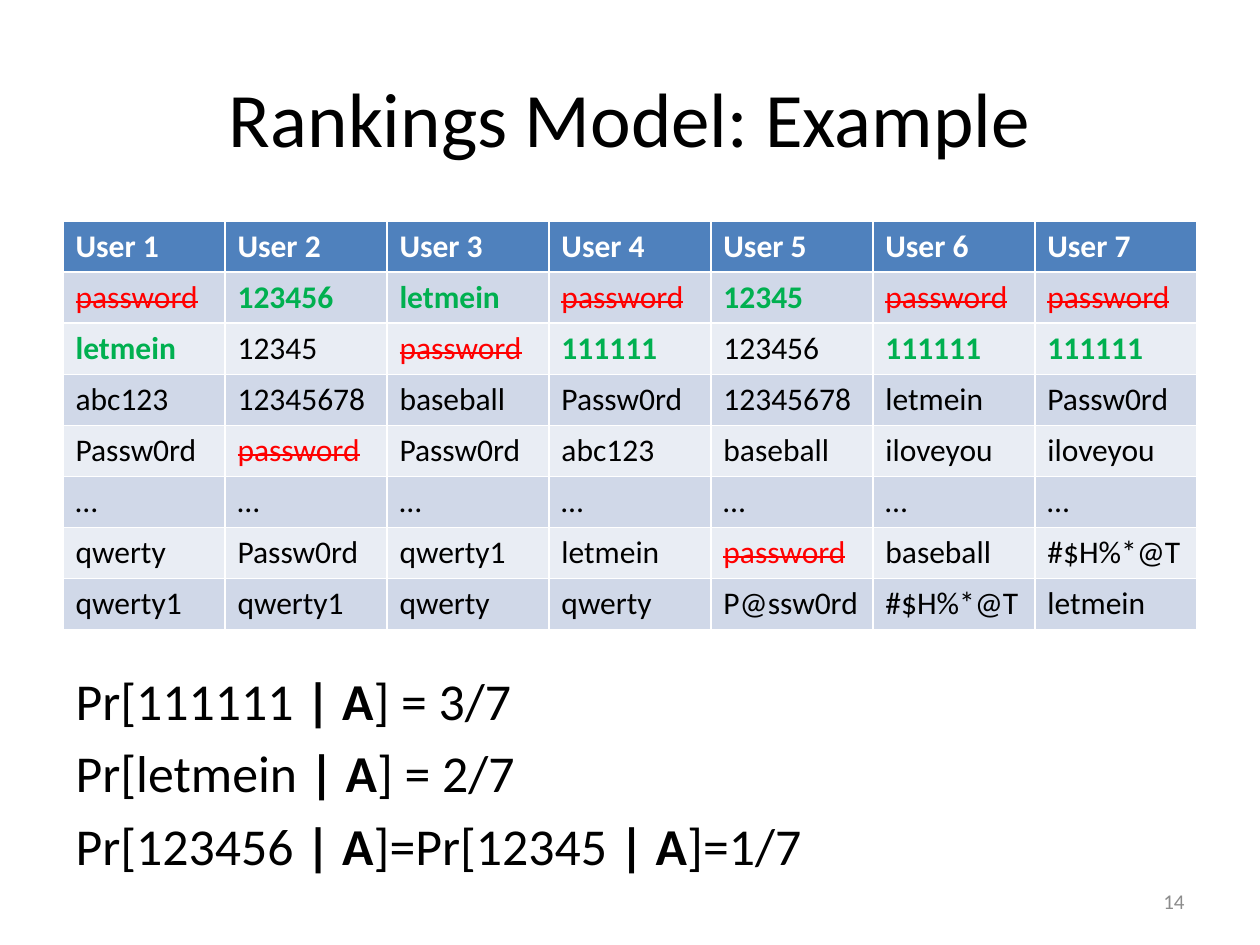
from dataclasses import dataclass

from lxml.etree import SubElement
from pptx import Presentation
from pptx.dml.color import RGBColor as Rgb
from pptx.enum.text import MSO_ANCHOR as Anchor, MSO_AUTO_SIZE as AutoSize, PP_ALIGN as Align
from pptx.oxml.ns import qn
from pptx.util import Emu, Pt

PX_PER_INCH = 126


@dataclass(frozen=True)
class Theme:
    font: str = "Calibri"
    ink: str = "000000"
    header_text: str = "FFFFFF"
    header_fill: str = "4F81BD"
    bands: tuple = ("D0D8E8", "E9EDF4")
    removed: str = "FF0000"
    top_choice: str = "00B050"
    muted: str = "8C8C8C"
    title_size: float = 44
    body_size: float = 29.6
    table_size: float = 18
    number_size: float = 12


THEME = Theme()
GUESSED = "password"

# One row per rank, one column per user
RANKINGS = [
    "password 123456 letmein password 12345 password password",
    "letmein 12345 password 111111 123456 111111 111111",
    "abc123 12345678 baseball Passw0rd 12345678 letmein Passw0rd",
    "Passw0rd password Passw0rd abc123 baseball iloveyou iloveyou",
    "… … … … … … …",
    "qwerty Passw0rd qwerty1 letmein password baseball #$H%*@T",
    "qwerty1 qwerty1 qwerty qwerty P@ssw0rd #$H%*@T letmein",
]

# Alternating plain and bold runs
PROBABILITIES = [
    ["Pr[111111 ", "| A", "] = 3/7"],
    ["Pr[letmein ", "| A", "] = 2/7"],
    ["Pr[123456 ", "| A", "]=Pr[12345 ", "| A", "]=1/7"],
]


def px(length):
    return Emu(round(length * 914400 / PX_PER_INCH))


def place(shape, left, top, width, height):
    shape.left, shape.top = px(left), px(top)
    shape.width, shape.height = px(width), px(height)


def add_run(paragraph, text, size, color=THEME.ink, bold=False, strike=False):
    run = paragraph.add_run()
    run.text = text
    run.font.name = THEME.font
    run.font.size = Pt(size)
    run.font.bold = bold
    run.font.color.rgb = Rgb.from_string(color)
    if strike:
        run._r.get_or_add_rPr().set("strike", "sngStrike")


def fill_title(title, text):
    place(title, 63, 38, 1134, 157)
    title.text_frame.vertical_anchor = Anchor.MIDDLE
    paragraph = title.text_frame.paragraphs[0]
    paragraph.alignment = Align.CENTER
    add_run(paragraph, text, THEME.title_size)


def fill_probabilities(body):
    place(body, 63, 662, 1134, 210)
    frame = body.text_frame
    frame.auto_size = AutoSize.NONE
    for index, pieces in enumerate(PROBABILITIES):
        paragraph = frame.add_paragraph() if index else frame.paragraphs[0]
        properties = paragraph._p.get_or_add_pPr()
        properties.set("marL", str(px(47)))
        properties.set("indent", str(-px(47)))
        SubElement(properties, qn("a:buNone"))
        for position, piece in enumerate(pieces):
            add_run(paragraph, piece, THEME.body_size, bold=position % 2 == 1)


def fill_cell(cell, text, fill, **style):
    cell.fill.solid()
    cell.fill.fore_color.rgb = Rgb.from_string(fill)
    add_run(cell.text_frame.paragraphs[0], text, THEME.table_size, **style)


def add_rankings(slide):
    ranks = [line.split() for line in RANKINGS]
    users = list(zip(*ranks))
    frame = slide.shapes.add_table(
        len(ranks) + 1, len(users), px(63), px(221), px(1134), px(408))
    table = frame.table

    for column, choices in enumerate(users):
        fill_cell(table.cell(0, column), f"User {column + 1}", THEME.header_fill,
                  color=THEME.header_text, bold=True)
        # The guessed password is struck out; the next best choice stands out
        top_choice = next(choice for choice in choices if choice != GUESSED)
        for rank, choice in enumerate(choices):
            if choice == GUESSED:
                style = {"color": THEME.removed, "strike": True}
            elif choice == top_choice:
                style = {"color": THEME.top_choice, "bold": True}
            else:
                style = {}
            fill_cell(table.cell(rank + 1, column), choice, THEME.bands[rank % 2], **style)


def add_slide_number(slide, number):
    box = slide.shapes.add_textbox(px(903), px(876), px(294), px(50))
    box.text_frame.word_wrap = True
    box.text_frame.vertical_anchor = Anchor.MIDDLE
    paragraph = box.text_frame.paragraphs[0]
    paragraph.alignment = Align.RIGHT
    add_run(paragraph, number, THEME.number_size, THEME.muted)


def main():
    deck = Presentation()
    deck.slide_width, deck.slide_height = px(1260), px(945)
    slide = deck.slides.add_slide(deck.slide_layouts[1])

    fill_title(slide.shapes.title, "Rankings Model: Example")
    fill_probabilities(slide.placeholders[1])
    add_rankings(slide)
    add_slide_number(slide, "14")

    deck.save("out.pptx")


if __name__ == "__main__":
    main()
